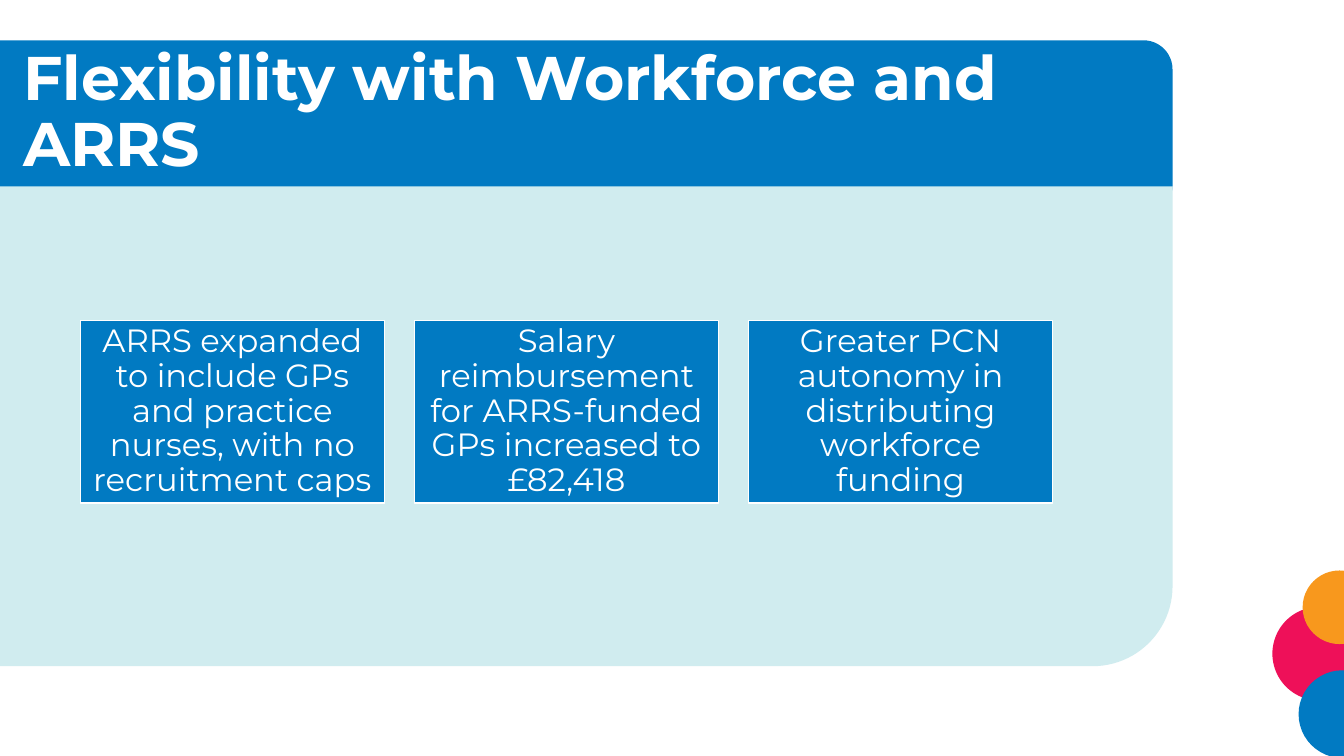
from dataclasses import dataclass

from pptx import Presentation
from pptx.dml.color import RGBColor
from pptx.enum.shapes import MSO_SHAPE
from pptx.enum.text import MSO_ANCHOR, MSO_AUTO_SIZE, PP_ALIGN
from pptx.util import Inches, Pt

RECT = MSO_SHAPE.RECTANGLE
ROUND_RECT = MSO_SHAPE.ROUNDED_RECTANGLE
ROUND_CORNER = MSO_SHAPE.ROUND_1_RECTANGLE
OVAL = MSO_SHAPE.OVAL
MIDDLE = MSO_ANCHOR.MIDDLE
NO_FIT = MSO_AUTO_SIZE.NONE
LEFT, CENTER = PP_ALIGN.LEFT, PP_ALIGN.CENTER


@dataclass(frozen=True)
class Theme:
    font: str = "Montserrat"
    blue: RGBColor = RGBColor(0x01, 0x7A, 0xC2)
    pale: RGBColor = RGBColor(0xD0, 0xEC, 0xEF)
    pink: RGBColor = RGBColor(0xEE, 0x10, 0x59)
    orange: RGBColor = RGBColor(0xF8, 0x98, 0x1D)
    white: RGBColor = RGBColor(0xFF, 0xFF, 0xFF)
    title_size: int = 44
    card_size: int = 23


THEME = Theme()
TITLE = "Flexibility with Workforce and ARRS"
CARDS = [
    "ARRS expanded to include GPs and practice nurses, with no recruitment caps",
    "Salary reimbursement for ARRS-funded GPs increased to £82,418",
    "Greater PCN autonomy in distributing workforce funding",
]


def add_filled(slide, kind, box, color):
    sp = slide.shapes.add_shape(kind, *map(Inches, box))
    sp.shadow.inherit = False
    sp.fill.solid()
    sp.fill.fore_color.rgb = color
    sp.line.fill.background()
    return sp


def write_text(sp, text, size, align, bold=False):
    tf = sp.text_frame
    tf.text = text
    frame_format = {"word_wrap": True, "auto_size": NO_FIT, "vertical_anchor": MIDDLE}
    for name, value in frame_format.items():
        setattr(tf, name, value)
    p = tf.paragraphs[0]
    p.alignment, p.line_spacing, p.space_before = align, 0.9, Pt(0)
    font = p.runs[0].font
    for name, value in {"name": THEME.font, "size": Pt(size), "bold": bold}.items():
        setattr(font, name, value)
    font.color.rgb = THEME.white


def add_backdrop(slide, box):
    """Blue header over a pale panel, both running off the left edge."""
    left, top, width, height = box
    right, panel_top = left + width, top + 1.45
    add_filled(slide, ROUND_RECT, (-0.4, top, right + 0.4, 1.73), THEME.blue)
    panel = add_filled(slide, ROUND_CORNER,
                       (-0.11, panel_top, right + 0.11, top + height - panel_top),
                       THEME.pale)
    panel._element.spPr.xfrm.set("flipV", "1")


def add_circles(slide, box):
    left, top = box
    circles = [(0, 0.36, 0.93, THEME.pink),
               (0.26, 0.99, 0.87, THEME.blue),
               (0.3, 0, 0.73, THEME.orange)]
    for dx, dy, size, color in circles:
        add_filled(slide, OVAL, (left + dx, top + dy, size, size), color)


def add_title(slide, box):
    title = slide.shapes.title
    slide.shapes._spTree.append(title._element)  # bring in front of the header
    title.left, title.top, title.width, title.height = map(Inches, box)
    write_text(title, TITLE, THEME.title_size, LEFT, bold=True)


def add_cards(slide, box, gap=0.3):
    left, top, width, height = box
    card_width = (width - gap * (len(CARDS) - 1)) / len(CARDS)
    for i, text in enumerate(CARDS):
        x = left + i * (card_width + gap)
        card = add_filled(slide, RECT, (x, top, card_width, height), THEME.blue)
        card.line.color.rgb = THEME.white
        card.line.width = Pt(1)
        tf = card.text_frame
        for side in ("left", "right", "top", "bottom"):
            setattr(tf, f"margin_{side}", Inches(0.1))
        write_text(card, text, THEME.card_size, CENTER)


def build_workforce_slide(prs):
    slide = prs.slides.add_slide(prs.slide_layouts[5])
    add_backdrop(slide, (0, 0.4, 11.63, 6.21))
    add_circles(slide, (12.62, 5.66))
    add_title(slide, (0.13, 0.4, 11.5, 1.45))
    add_cards(slide, (0.8, 3.18, 9.64, 1.81))


def main():
    prs = Presentation()
    prs.slide_width, prs.slide_height = Inches(13.33), Inches(7.5)
    build_workforce_slide(prs)
    prs.save("out.pptx")


if __name__ == "__main__":
    main()
